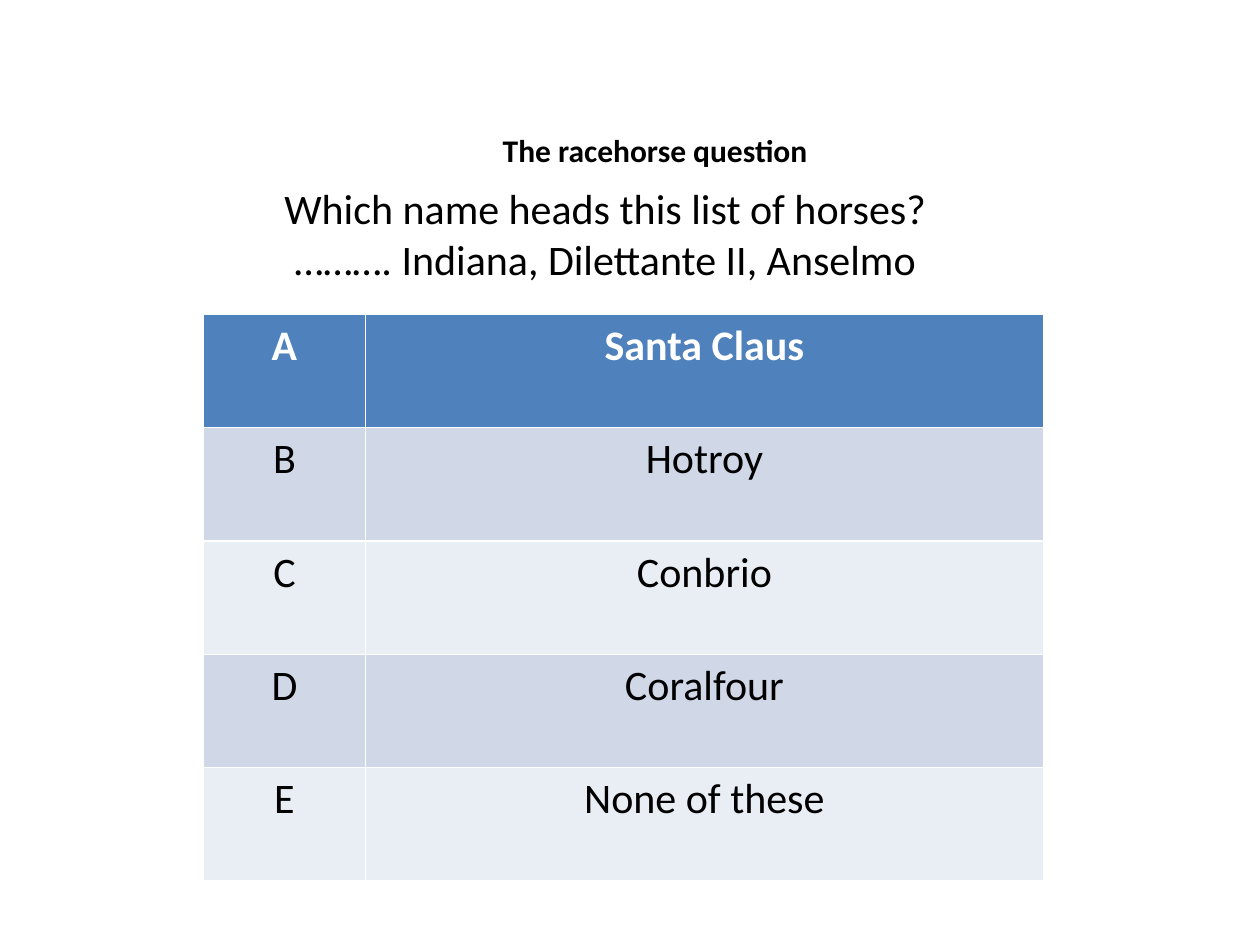
from pptx import Presentation
from pptx.dml.color import RGBColor
from pptx.enum.text import PP_ALIGN
from pptx.util import Pt

CENTER = PP_ALIGN.CENTER
FONT = "Calibri"
COLORS = {
    "text": "000000",
    "header_text": "FFFFFF",
    "header": "4F81BD",
    "dark_band": "D0D8E8",
    "light_band": "E9EDF4",
}
ANSWERS = ["Santa Claus", "Hotroy", "Conbrio", "Coralfour", "None of these"]


def write_text(frame, text, size, color, bold=False):
    frame.text = text
    for paragraph in frame.paragraphs:
        paragraph.alignment = CENTER
        for span in paragraph.runs:
            span.font.name = FONT
            span.font.size = Pt(size)
            span.font.bold = bold
            span.font.color.rgb = RGBColor.from_string(COLORS[color])


deck = Presentation()
deck.slide_width = Pt(720)
deck.slide_height = Pt(540)
page = deck.slides.add_slide(deck.slide_layouts[6])

row_height = 64.8
table = page.shapes.add_table(
    len(ANSWERS), 2, Pt(116.2), Pt(179.5), Pt(480), Pt(row_height * len(ANSWERS))
).table
table.columns[0].width = Pt(92.7)
table.columns[1].width = Pt(387.3)

for index, (letter, answer) in enumerate(zip("ABCDE", ANSWERS)):
    is_header = index == 0
    band = "header" if is_header else "dark_band" if index % 2 else "light_band"
    color = "header_text" if is_header else "text"
    table.rows[index].height = Pt(row_height)
    for column, text in enumerate((letter, answer)):
        cell = table.cell(index, column)
        cell.fill.solid()
        cell.fill.fore_color.rgb = RGBColor.from_string(COLORS[band])
        write_text(cell.text_frame, text, 24, color, is_header)

question = "Which name heads this list of horses?\n………. Indiana, Dilettante II, Anselmo"
for left, top, width, height, text, size, bold in [
    (87.8, 100.8, 516.2, 65.4, question, 24, False),
    (229.7, 71.3, 289.4, 29, "The racehorse question", 18, True),
]:
    box = page.shapes.add_textbox(Pt(left), Pt(top), Pt(width), Pt(height))
    box.text_frame.word_wrap = True
    write_text(box.text_frame, text, size, "text", bold)

deck.save("out.pptx")
